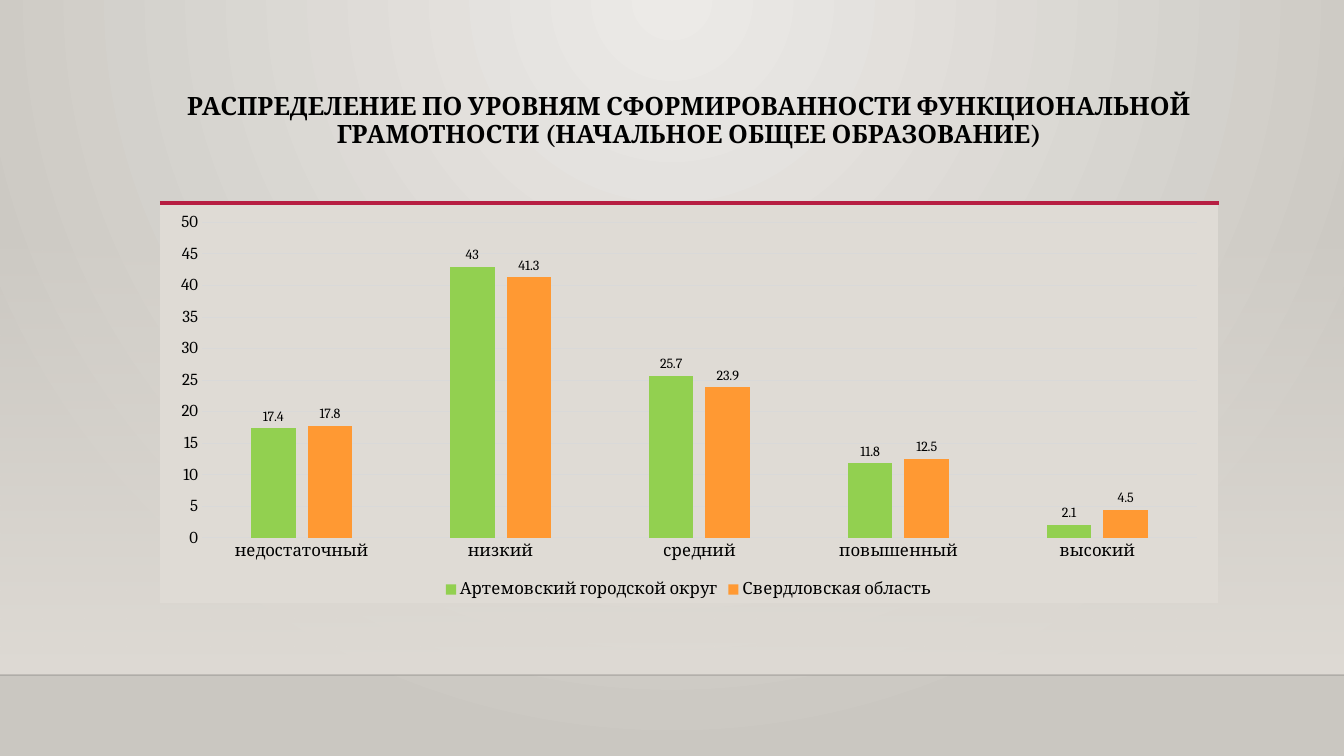
from lxml import etree
from pptx import Presentation, util as u
from pptx.chart.data import CategoryChartData
from pptx.dml.color import RGBColor
from pptx.enum import chart as c, shapes, text
from pptx.oxml import parse_xml
from pptx.oxml.ns import nsdecls, qn

# Content
TITLE = ("РАСПРЕДЕЛЕНИЕ ПО УРОВНЯМ СФОРМИРОВАННОСТИ ФУНКЦИОНАЛЬНОЙ "
         "ГРАМОТНОСТИ (НАЧАЛЬНОЕ ОБЩЕЕ ОБРАЗОВАНИЕ)")
LEVELS = ["недостаточный", "низкий", "средний", "повышенный", "высокий"]
SERIES = [
    ("Артемовский городской округ", "92D050", [17.4, 43, 25.7, 11.8, 2.1]),
    ("Свердловская область", "FF9933", [17.8, 41.3, 23.9, 12.5, 4.5]),
]
FONT, BLACK, SAND, GRID = "Cambria", "000000", "DFDBD5", "D9D9D9"

# Lengths in px
WIDTH, HEIGHT = 1344, 756
LEFT, CONTENT_WIDTH = 160, 1058
FLOOR = 675


def px(value):
    return u.Emu(round(value * 914400 / 100.8))


def rgb(color):
    return RGBColor.from_string(color)


def style(font, size, bold=False):
    font.name, font.size, font.bold = FONT, u.Pt(size), bold
    font.color.rgb = rgb(BLACK)


def gradient(start, end, direction, start_alpha=100):
    return (f'<a:gradFill {nsdecls("a")} rotWithShape="1"><a:gsLst>'
            f'<a:gs pos="0"><a:srgbClr val="{start}">'
            f'<a:alpha val="{start_alpha * 1000}"/></a:srgbClr></a:gs>'
            f'<a:gs pos="100000"><a:srgbClr val="{end}"/></a:gs>'
            f'</a:gsLst>{direction}</a:gradFill>')


def add_rule(x1, x2, y, color, width, alpha=100):
    rule = slide.shapes.add_connector(
        shapes.MSO_CONNECTOR.STRAIGHT, px(x1), px(y), px(x2), px(y))
    rule.line.color.rgb = rgb(color)
    rule.line.width = u.Pt(width)
    properties = rule._element.spPr
    tint = next(properties.iter(qn("a:srgbClr")))
    etree.SubElement(tint, qn("a:alpha")).set("val", str(alpha * 1000))
    etree.SubElement(properties, qn("a:effectLst"))


presentation = Presentation()
presentation.slide_width, presentation.slide_height = px(WIDTH), px(HEIGHT)
slide = presentation.slides.add_slide(presentation.slide_layouts[5])

# Background
radial = ('<a:path path="circle"><a:fillToRect l="43000" t="0" '
          'r="43000" b="100000"/></a:path>')
slide._element.cSld.insert(0, parse_xml(
    f'<p:bg {nsdecls("p")}><p:bgPr>{gradient("ECEAE7", "CAC7C1", radial)}'
    f'<a:effectLst {nsdecls("a")}/></p:bgPr></p:bg>'))

# Wall fading into the floor line
wall_top = 223
wall = slide.shapes.add_shape(shapes.MSO_SHAPE.RECTANGLE, 0, px(wall_top),
                              px(WIDTH), px(FLOOR - wall_top))
wall.shadow.inherit = False
wall.line.fill.background()
wall.fill.background()
properties = wall._element.spPr
properties.replace(properties.find(qn("a:noFill")), parse_xml(
    gradient(SAND, SAND, '<a:lin ang="5400000" scaled="0"/>', 0)))
add_rule(0, WIDTH, FLOOR, "000001", 1, 20)
add_rule(LEFT, LEFT + CONTENT_WIDTH + 1, 203, "B71E42", 2.5)

# Title
title = slide.shapes.title
title._element.getparent().append(title._element)
title.left, title.top = px(LEFT), px(89)
title.width, title.height = px(CONTENT_WIDTH), px(97)
frame = title.text_frame
frame.word_wrap = True
frame.auto_size = text.MSO_AUTO_SIZE.NONE
frame.vertical_anchor = text.MSO_ANCHOR.TOP
paragraph = frame.paragraphs[0]
paragraph.alignment = text.PP_ALIGN.CENTER
paragraph.line_spacing = 0.9
run = paragraph.add_run()
run.text = TITLE
style(run.font, 18, True)

# Chart
data = CategoryChartData()
data.categories = LEVELS
for name, _, values in SERIES:
    data.add_series(name, values)
chart = slide.shapes.add_chart(
    c.XL_CHART_TYPE.COLUMN_CLUSTERED, px(LEFT), px(205),
    px(CONTENT_WIDTH), px(398), data).chart
style(chart.font, 12)
chart.has_title = False
chart.has_legend = True
chart.legend.position = c.XL_LEGEND_POSITION.BOTTOM
chart.legend.include_in_layout = False
style(chart.legend.font, 12)
chart._chartSpace.find(qn("c:chart")).addnext(parse_xml(
    f'<c:spPr {nsdecls("c", "a")}><a:solidFill><a:srgbClr val="{SAND}"/>'
    '</a:solidFill><a:ln><a:noFill/></a:ln></c:spPr>'))

# Columns
plot = chart.plots[0]
plot.gap_width, plot.overlap = 219, -27
plot.vary_by_categories = False
for series, (_, color, _) in zip(plot.series, SERIES):
    series.invert_if_negative = False
    series.format.fill.solid()
    series.format.fill.fore_color.rgb = rgb(color)
    labels = series.data_labels
    labels.show_value = True
    labels.position = c.XL_LABEL_POSITION.OUTSIDE_END
    style(labels.font, 10)

# Axes
levels, scale = chart.category_axis, chart.value_axis
for axis in (levels, scale):
    axis.major_tick_mark = axis.minor_tick_mark = c.XL_TICK_MARK.NONE
    style(axis.tick_labels.font, 12)
scale.minimum_scale, scale.maximum_scale, scale.major_unit = 0, 50, 5
scale.format.line.fill.background()
for line in (levels.format.line, scale.major_gridlines.format.line):
    line.color.rgb = rgb(GRID)
    line.width = u.Pt(0.75)

presentation.save("out.pptx")
